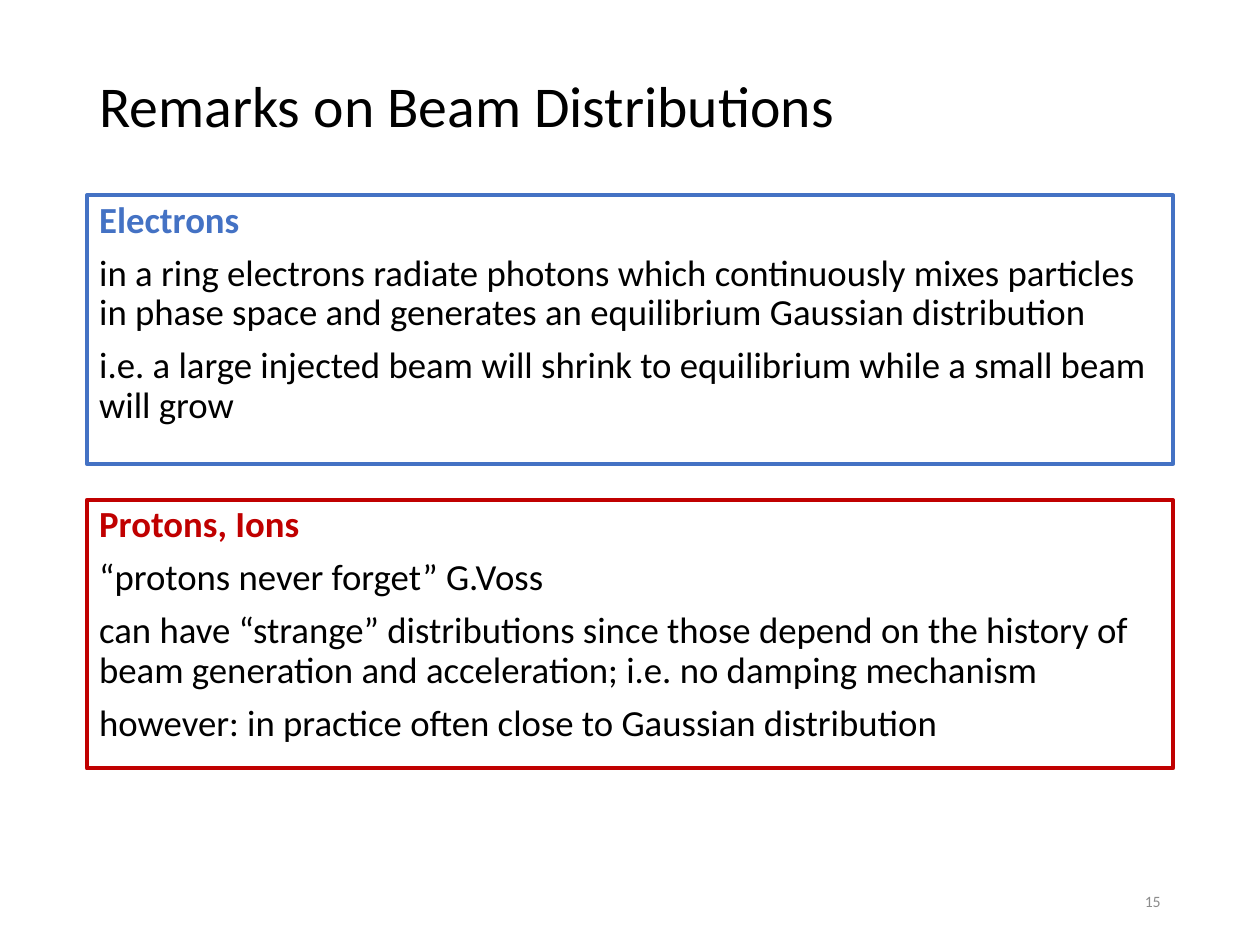
from pptx import Presentation
from pptx.dml.color import RGBColor
from pptx.enum.shapes import MSO_SHAPE as Shape
from pptx.enum.text import MSO_ANCHOR as Anchor, MSO_AUTO_SIZE as AutoSize, PP_ALIGN as Align
from pptx.util import Cm, Pt

BLACK, BLUE, RED, GREY = "000000", "4472C4", "C00000", "8C8C8C"
LEFT, WIDTH = 1.75, 21.9
PANEL_TOP, PANEL_HEIGHT, PANEL_STEP = 3.94, 5.41, 6.14

PANELS = [
    ("Electrons", BLUE, [
        "in a ring electrons radiate photons which continuously mixes particles "
        "in phase space and generates an equilibrium Gaussian distribution",
        "i.e. a large injected beam will shrink to equilibrium while a small beam will grow",
    ]),
    ("Protons, Ions", RED, [
        "“protons never forget” G.Voss",
        "can have “strange” distributions since those depend on the history of "
        "beam generation and acceleration; i.e. no damping mechanism",
        "however: in practice often close to Gaussian distribution",
    ]),
]


def color(hex_text):
    return RGBColor.from_string(hex_text)


def set_all(target, values):
    for name, value in values.items():
        setattr(target, name, value)


def place(shape, box):
    names = ("left", "top", "width", "height")
    set_all(shape, dict(zip(names, map(Cm, box))))


def set_frame(frame, anchor):
    set_all(frame, {"word_wrap": True, "auto_size": AutoSize.NONE, "vertical_anchor": anchor})


def write(para, text, size, hex_text, bold=False, **layout):
    """Put one formatted span of text in a paragraph."""
    set_all(para, {"alignment": Align.LEFT, **layout})
    span = para.add_run()
    span.text = text
    set_all(span.font, {"name": "Calibri", "size": Pt(size), "bold": bold})
    span.font.color.rgb = color(hex_text)


def add_title(page, box, text):
    title = page.shapes.title
    place(title, box)
    set_frame(title.text_frame, Anchor.MIDDLE)
    write(title.text_frame.paragraphs[0], text, 33, BLACK, line_spacing=0.9)


def add_panel(page, box, heading, accent, remarks):
    """Add an outlined box with a coloured heading above its remarks."""
    panel = page.shapes.add_shape(Shape.RECTANGLE, *map(Cm, box))
    panel.shadow.inherit = False
    panel.fill.background()
    panel.line.color.rgb = color(accent)
    panel.line.width = Pt(2.25)
    frame = panel.text_frame
    set_frame(frame, Anchor.TOP)
    write(frame.paragraphs[0], heading, 21, accent, bold=True, line_spacing=0.9)
    for remark in remarks:
        write(frame.add_paragraph(), remark, 21, BLACK,
              line_spacing=0.9, space_before=Pt(7.5))


def add_page_number(page, box, number):
    frame = page.shapes.add_textbox(*map(Cm, box)).text_frame
    set_frame(frame, Anchor.MIDDLE)
    write(frame.paragraphs[0], number, 9, GREY, alignment=Align.RIGHT)


def main():
    deck = Presentation()
    set_all(deck, {"slide_width": Cm(25.4), "slide_height": Cm(19.05)})
    page = deck.slides.add_slide(deck.slide_layouts[5])
    add_title(page, (LEFT, 1.02, WIDTH, 2.34), "Remarks on Beam Distributions")
    for index, panel in enumerate(PANELS):
        top = PANEL_TOP + index * PANEL_STEP
        add_panel(page, (LEFT, top, WIDTH, PANEL_HEIGHT), *panel)
    number_width = 5.72
    add_page_number(page, (LEFT + WIDTH - number_width, 17.65, number_width, 1.02), "15")
    deck.save("out.pptx")


if __name__ == "__main__":
    main()
